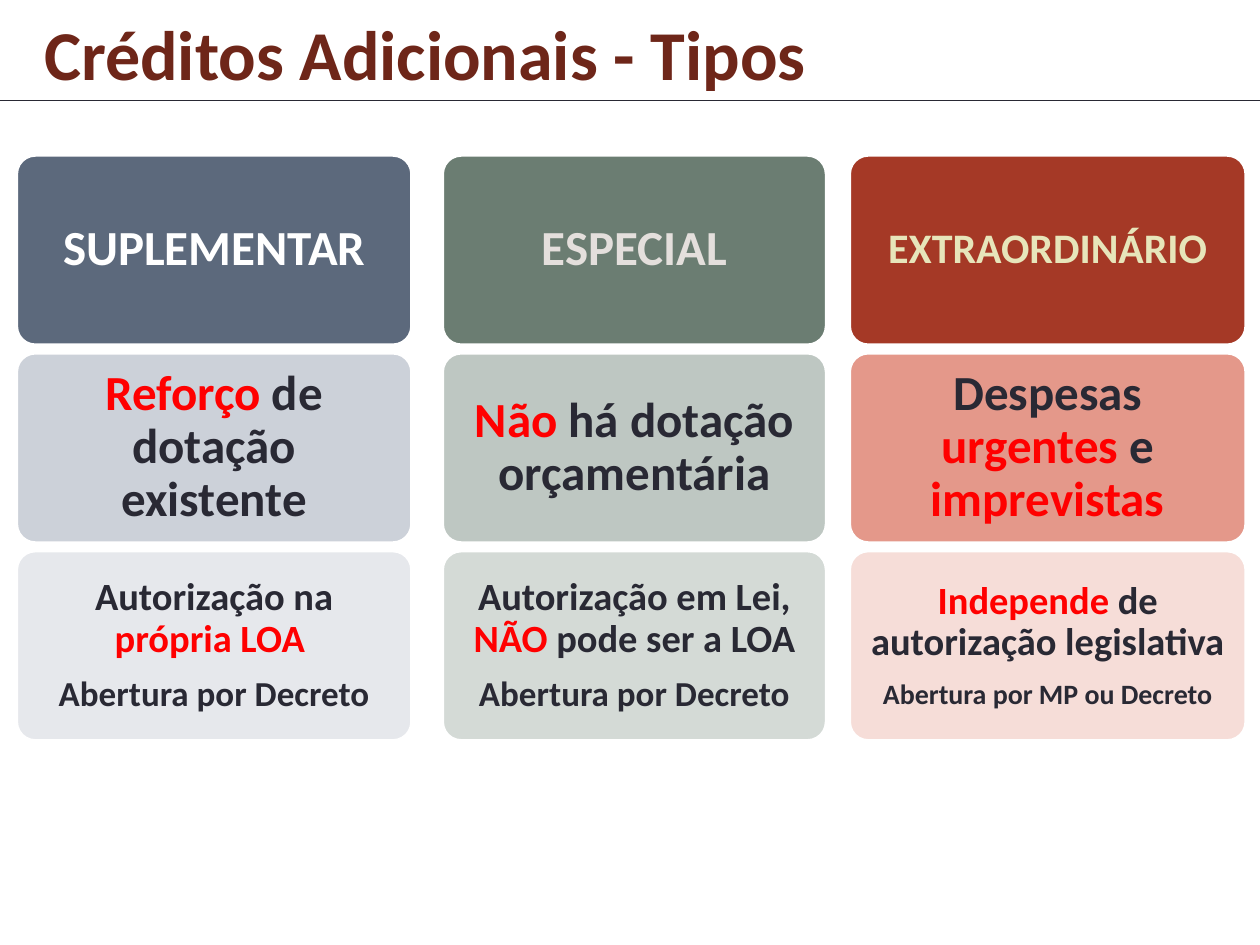
from dataclasses import dataclass

from lxml.etree import SubElement
from pptx import Presentation
from pptx.dml.color import RGBColor
from pptx.enum.shapes import MSO_CONNECTOR, MSO_SHAPE
from pptx.enum.text import MSO_ANCHOR, MSO_AUTO_SIZE, PP_ALIGN
from pptx.oxml.ns import qn
from pptx.util import Inches, Pt


@dataclass(frozen=True)
class Theme:
    font: str = "Calibri"
    title_color: str = "6E2619"
    text_color: str = "292934"
    highlight_color: str = "FF0000"
    border_color: str = "FFFFFF"
    title_size: int = 40
    large_size: int = 28
    heading_small_size: int = 24
    body_size: int = 22
    note_size: int = 20
    note_small_size: int = 16


THEME = Theme()
CARD_TOP = 1.23
CARD_HEIGHT = 1.51
CARD_PITCH = 1.57

# Text between asterisks is highlighted.
COLUMNS = [
    {
        "left": 0.13, "width": 3.14, "fills": ["5C697C", "CCD1D9", "E6E8EC"],
        "heading": ("SUPLEMENTAR", THEME.large_size, "FFFFFF"),
        "purpose": "*Reforço* de dotação existente",
        "authorization": "Autorização na *própria LOA *",
        "opening": ("Abertura por Decreto", THEME.note_size),
    },
    {
        "left": 3.51, "width": 3.05, "fills": ["6B7D72", "BEC7C2", "D4DAD6"],
        "heading": ("ESPECIAL", THEME.large_size, "E4DFDC"),
        "purpose": "*Não* há dotação orçamentária",
        "authorization": "Autorização em Lei, *NÃO* pode ser a LOA",
        "opening": ("Abertura por Decreto", THEME.note_size),
    },
    {
        "left": 6.74, "width": 3.15, "fills": ["A53926", "E4988A", "F6DDD8"],
        "heading": ("EXTRAORDINÁRIO", THEME.heading_small_size, "E7E5BA"),
        "purpose": "Despesas *urgentes* e *imprevistas*",
        "authorization": "*Independe* de autorização legislativa",
        "opening": ("Abertura por MP ou Decreto", THEME.note_small_size),
    },
]


class SlideBuilder:
    def __init__(self, slide, theme):
        self.slide = slide
        self.theme = theme

    def set_values(self, target, values):
        for name, value in values.items():
            setattr(target, name, value)

    def add_run(self, paragraph, text, size, color):
        run = paragraph.add_run()
        run.text = text
        self.set_values(run.font, {"name": self.theme.font, "size": Pt(size), "bold": True})
        run.font.color.rgb = RGBColor.from_string(color)

    def title(self, text, left, top, width, height):
        shape = self.slide.shapes.title
        self.set_values(shape, {
            "left": Inches(left), "top": Inches(top),
            "width": Inches(width), "height": Inches(height),
        })
        self.set_values(shape.text_frame, {
            "word_wrap": False, "auto_size": MSO_AUTO_SIZE.NONE,
            "vertical_anchor": MSO_ANCHOR.TOP,
        })
        paragraph = shape.text_frame.paragraphs[0]
        paragraph.alignment = PP_ALIGN.LEFT
        self.add_run(paragraph, text, self.theme.title_size, self.theme.title_color)

    def rule(self, top, width):
        line = self.slide.shapes.add_connector(
            MSO_CONNECTOR.STRAIGHT, 0, Inches(top), Inches(width), Inches(top))
        line.line.width = Pt(0.75)
        line.line.color.rgb = RGBColor.from_string(self.theme.text_color)
        SubElement(line.element.spPr, qn("a:effectLst"))

    def card(self, left, top, width, fill, paragraphs, margin):
        """Draw a card from (marked text, size, base color) paragraphs."""
        shape = self.slide.shapes.add_shape(
            MSO_SHAPE.ROUNDED_RECTANGLE,
            Inches(left), Inches(top), Inches(width), Inches(CARD_HEIGHT))
        shape.adjustments[0] = 0.1
        shape.shadow.inherit = False
        shape.fill.solid()
        shape.fill.fore_color.rgb = RGBColor.from_string(fill)
        shape.line.color.rgb = RGBColor.from_string(self.theme.border_color)
        shape.line.width = Pt(2)
        frame = shape.text_frame
        self.set_values(frame, {"word_wrap": True, "vertical_anchor": MSO_ANCHOR.MIDDLE})
        self.set_values(frame, {
            f"margin_{side}": Inches(margin) for side in ("left", "top", "right", "bottom")
        })
        for index, (text, size, color) in enumerate(paragraphs):
            paragraph = frame.add_paragraph() if index else frame.paragraphs[0]
            self.set_values(paragraph, {"alignment": PP_ALIGN.CENTER, "line_spacing": 0.9})
            if index:
                paragraph.space_before = Pt(9)
            for part_index, part in enumerate(text.split("*")):
                if part:
                    part_color = self.theme.highlight_color if part_index % 2 else color
                    self.add_run(paragraph, part, size, part_color)

    def column(self, left, width, fills, heading, purpose, authorization, opening):
        color = self.theme.text_color
        cards = [
            ([heading], 0.12),
            ([(purpose, self.theme.large_size, color)], 0.12),
            ([(authorization, self.theme.body_size, color), (*opening, color)], 0.09),
        ]
        for row, (fill, (paragraphs, margin)) in enumerate(zip(fills, cards)):
            self.card(left, CARD_TOP + row * CARD_PITCH, width, fill, paragraphs, margin)


def main():
    presentation = Presentation()
    presentation.slide_width = Inches(10)
    presentation.slide_height = Inches(7.5)
    slide = presentation.slides.add_slide(presentation.slide_layouts.get_by_name("Title Only"))
    builder = SlideBuilder(slide, THEME)
    builder.rule(0.8, 10)
    builder.title("Créditos Adicionais - Tipos", 0.25, 0.03, 6.32, 0.77)
    for column in COLUMNS:
        builder.column(**column)
    presentation.save("out.pptx")


if __name__ == "__main__":
    main()
